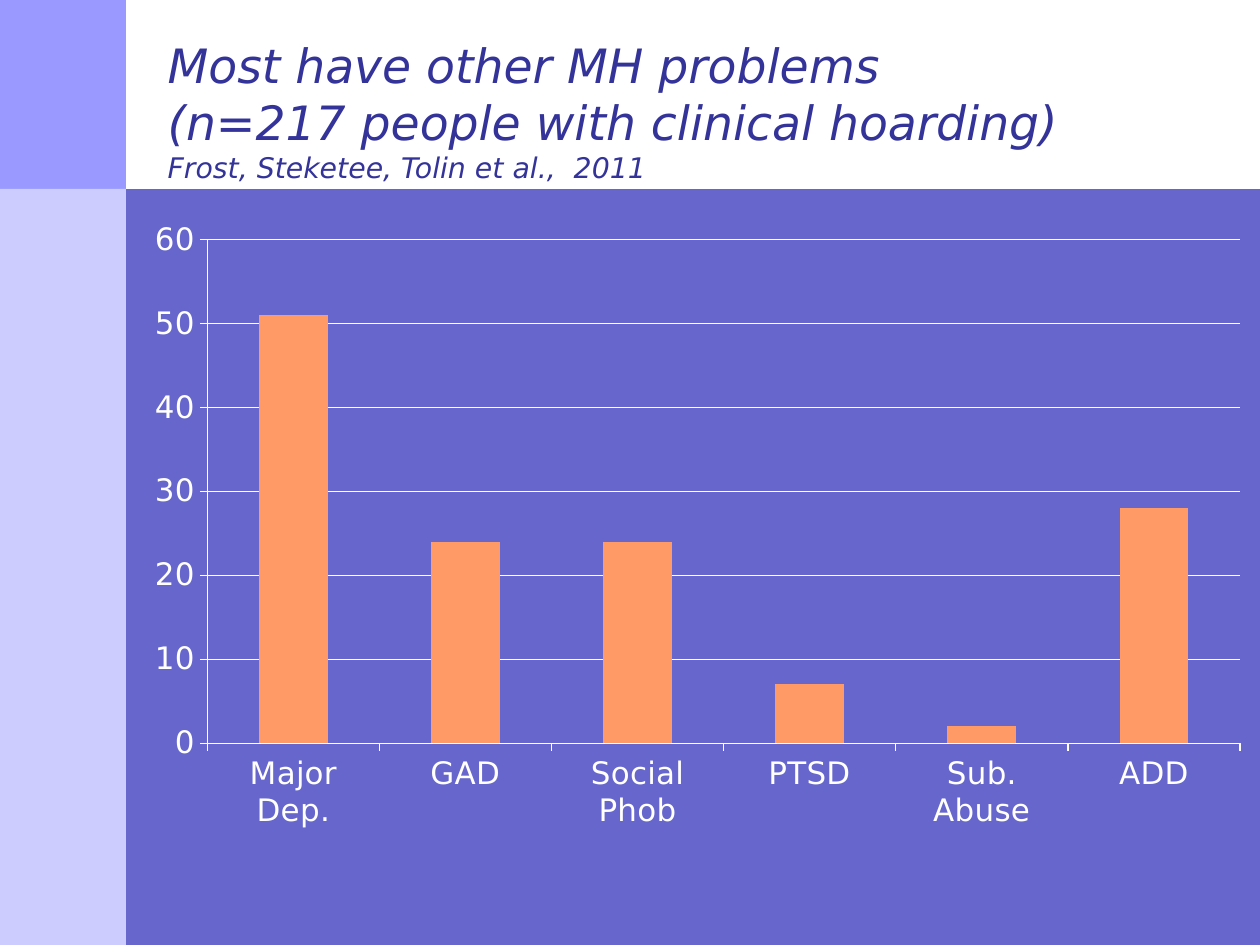
"""Build a slide with a column chart of mental health problems that accompany hoarding."""
from lxml import etree
from pptx import Presentation
from pptx import util as u
from pptx.chart.data import CategoryChartData
from pptx.dml.color import RGBColor
from pptx.enum import chart as ch, shapes, text
from pptx.oxml.ns import qn


def color(fmt, value):
    if hasattr(fmt, "solid"):
        fmt.solid()
        fmt = fmt.fore_color
    fmt.rgb = RGBColor.from_string(value)


prs = Presentation()
prs.slide_width, prs.slide_height = u.Cm(25.4), u.Cm(19.05)
s = prs.slides.add_slide(prs.slide_layouts[6])
color(s.background.fill, "6666CC")

for left, top, width, height, fill in [
    (0, 0, 25.4, 3.81, "FFFFFF"),
    (0, 0, 2.54, 3.81, "9999FF"),
    (0, 3.81, 2.54, 15.24, "CCCCFF"),
]:
    sp = s.shapes.add_shape(shapes.MSO_SHAPE.RECTANGLE,
                            u.Cm(left), u.Cm(top), u.Cm(width), u.Cm(height))
    sp.shadow.inherit = False
    color(sp.fill, fill)
    sp.line.fill.background()

tf = s.shapes.add_textbox(u.Cm(2.97), u.Cm(0.64), u.Cm(22.86), u.Cm(3.17)).text_frame
frame = {"word_wrap": True, "vertical_anchor": text.MSO_ANCHOR.MIDDLE,
         "margin_left": u.Cm(0.41)}
for name, value in frame.items():
    setattr(tf, name, value)

p = tf.paragraphs[0]
lines = [("Most have other MH problems ", 27),
         ("(n=217 people with clinical hoarding)", 27),
         ("Frost, Steketee, Tolin et al.,  2011", 16.2)]
for i, (line, size) in enumerate(lines):
    if i:
        p.add_line_break()
    r = p.add_run()
    r.text = line
    for name, value in {"name": "DejaVu Sans", "size": u.Pt(size), "italic": True}.items():
        setattr(r.font, name, value)
    color(r.font.color, "333399")

data = CategoryChartData()
data.categories = ["Major Dep.", "GAD", "Social Phob", "PTSD", "Sub. Abuse", "ADD"]
data.add_series("Series 1", [51, 24, 24, 7, 2, 28])
chart = s.shapes.add_chart(ch.XL_CHART_TYPE.COLUMN_CLUSTERED, u.Cm(1.9), u.Cm(4.24),
                           u.Cm(23.5), u.Cm(12.9), data).chart
for name, value in {"has_legend": False, "has_title": False}.items():
    setattr(chart, name, value)
for name, value in {"name": "DejaVu Sans", "size": u.Pt(17.7)}.items():
    setattr(chart.font, name, value)
color(chart.font.color, "FFFFFF")

plot = chart.plots[0]
for name, value in {"gap_width": 150, "vary_by_categories": False}.items():
    setattr(plot, name, value)
color(plot.series[0].format.fill, "FF9966")

cat, val = chart.category_axis, chart.value_axis
scale = {"minimum_scale": 0, "maximum_scale": 60, "major_unit": 10,
         "has_major_gridlines": True}
for name, value in scale.items():
    setattr(val, name, value)
for axis in (cat, val):
    axis.major_tick_mark = ch.XL_TICK_MARK.OUTSIDE
for line in (cat.format.line, val.format.line, val.major_gridlines.format.line):
    color(line.fill, "FFFFFF")
    line.width = u.Pt(0.75)

area = plot._element.getparent()
for old in area.findall(qn("c:layout")):
    area.remove(old)
layout = etree.Element(qn("c:layout"))
area.insert(0, layout)
manual = etree.SubElement(layout, qn("c:manualLayout"))
for tag, value in [("layoutTarget", "inner"), ("xMode", "edge"), ("yMode", "edge"),
                   ("x", "0.097"), ("y", "0.046"), ("w", "0.886"), ("h", "0.787")]:
    etree.SubElement(manual, qn("c:" + tag)).set("val", value)

prs.save("out.pptx")
